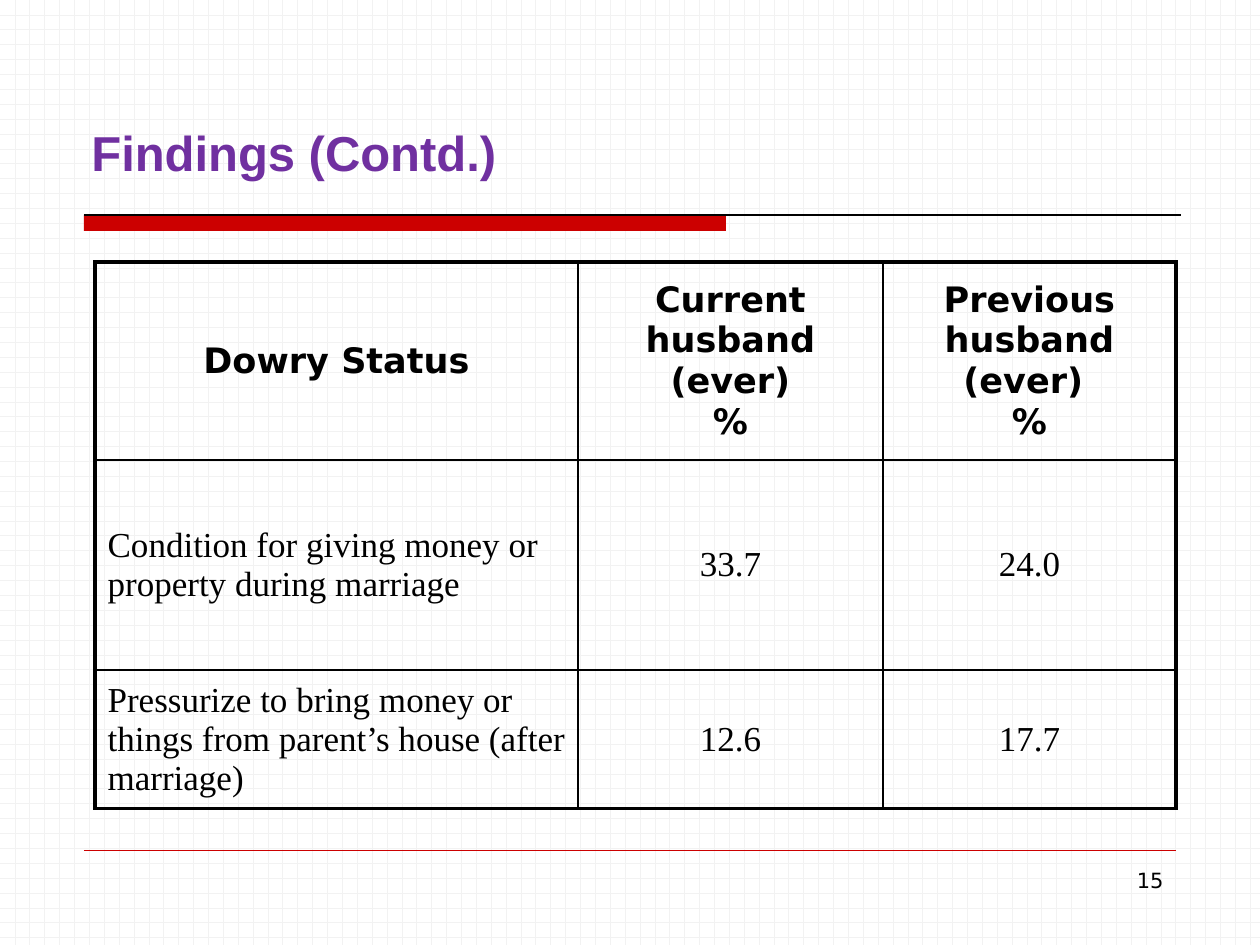
"""Build the findings slide with its dowry status table."""
from lxml import etree
from pptx import Presentation
from pptx import util as u
from pptx.dml.color import RGBColor
from pptx.enum import dml, shapes, text
from pptx.oxml.ns import qn

BLACK = RGBColor(0x00, 0x00, 0x00)
WHITE = RGBColor(0xFF, 0xFF, 0xFF)
GRID = RGBColor(0xF2, 0xF2, 0xF2)
RED = RGBColor(0xCC, 0x00, 0x00)
PURPLE = RGBColor(0x70, 0x30, 0xA0)
LEFT, CENTER, RIGHT = text.PP_ALIGN.LEFT, text.PP_ALIGN.CENTER, text.PP_ALIGN.RIGHT


def px(*lengths):
    return [u.Emu(round(length * 914400 / 126)) for length in lengths]


def write(frame, content, size=20, font="DejaVu Sans", color=BLACK, bold=False, align=LEFT):
    frame.word_wrap = True
    frame.text = content
    for paragraph in frame.paragraphs:
        paragraph.alignment = align
        for run in paragraph.runs:
            run.font.size, run.font.name, run.font.bold = u.Pt(size), font, bold
            run.font.color.rgb = color


deck = Presentation()
deck.slide_width, deck.slide_height = px(1260, 945)
slide = deck.slides.add_slide(deck.slide_layouts[6])
backdrop = slide.background.fill
backdrop.patterned()
backdrop.pattern = dml.MSO_PATTERN.HORIZONTAL_BRICK
backdrop.fore_color.rgb, backdrop.back_color.rgb = GRID, WHITE

title_bar = slide.shapes.add_shape(shapes.MSO_SHAPE.RECTANGLE, *px(84, 215, 642, 16))
title_bar.shadow.inherit = False
title_bar.fill.solid()
title_bar.fill.fore_color.rgb = RED
title_bar.line.fill.background()

for start, end, y, color, width in ((84, 1181, 215, BLACK, 0.75), (84, 1176, 850, RED, 0.25)):
    rule = slide.shapes.add_connector(shapes.MSO_CONNECTOR.STRAIGHT, *px(start, y, end, y))
    rule.line.color.rgb, rule.line.width = color, u.Pt(width)
    etree.SubElement(rule._element.spPr, qn("a:effectLst"))

title = slide.shapes.add_textbox(*px(79, 116, 1103, 72)).text_frame
title.vertical_anchor = text.MSO_ANCHOR.BOTTOM
write(title, "Findings (Contd.)", size=28, font="Arial", color=PURPLE, bold=True)

findings = (
    ("Dowry Status", "Current husband (ever)\n%", "Previous husband (ever) \n%"),
    ("Condition for giving money or property during marriage", "33.7", "24.0"),
    ("Pressurize to bring money or things from parent’s house (after marriage)", "12.6", "17.7"),
)
widths, heights = px(483, 305, 293), px(198, 210, 138)
dowry = slide.shapes.add_table(3, 3, *px(95, 262, 1081, 546)).table
dowry.first_row = dowry.horz_banding = False
for column, width in zip(dowry.columns, widths):
    column.width = width
for row, height in zip(dowry.rows, heights):
    row.height = height

for r, entries in enumerate(findings):
    for c, entry in enumerate(entries):
        cell = dowry.cell(r, c)
        cell.vertical_anchor = text.MSO_ANCHOR.MIDDLE
        write(cell.text_frame, entry, bold=r == 0,
              font="Times New Roman" if r else "DejaVu Sans",
              align=LEFT if r and c == 0 else CENTER)
        outer_edges = {"lnL": c == 0, "lnR": c == 2, "lnT": r == 0, "lnB": r == 2}
        for edge, outer in outer_edges.items():
            border = etree.SubElement(cell._tc.get_or_add_tcPr(), qn(f"a:{edge}"),
                                      w=str(u.Pt(2.25 if outer else 1)))
            ink = etree.SubElement(border, qn("a:solidFill"))
            etree.SubElement(ink, qn("a:srgbClr"), val=str(BLACK))
        cell.fill.background()

page_number = slide.shapes.add_textbox(*px(903, 861, 273, 66)).text_frame
write(page_number, "15", size=12, align=RIGHT)

deck.save("out.pptx")
